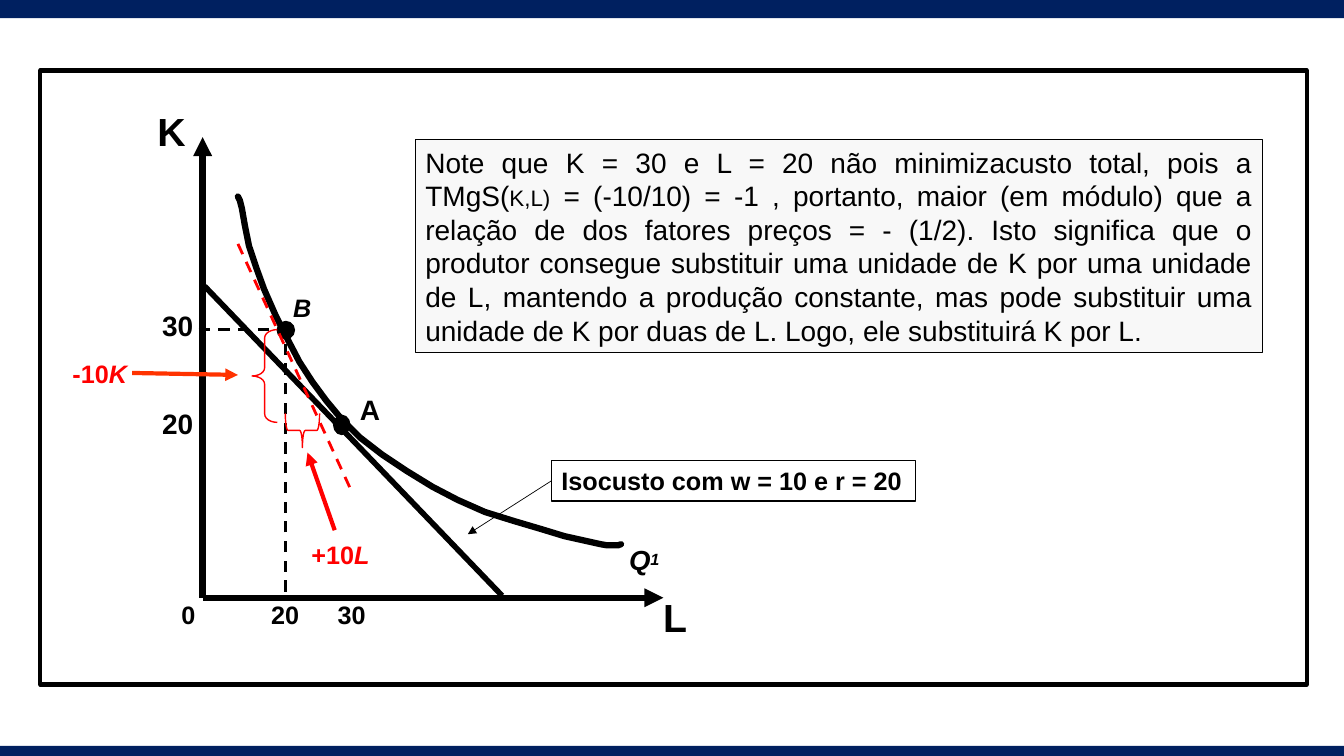
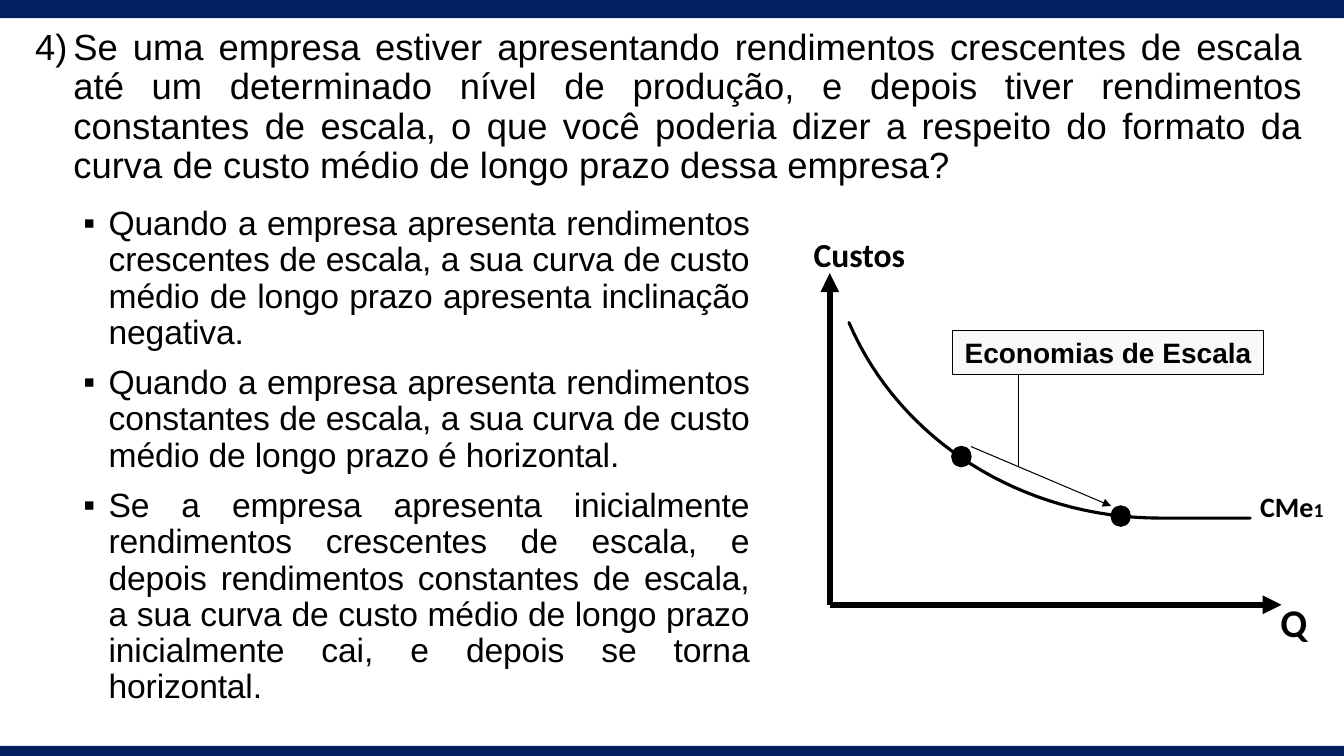
from lxml import etree
from pptx import Presentation
from pptx.dml.color import RGBColor
from pptx.enum.dml import MSO_LINE
from pptx.enum.shapes import MSO_CONNECTOR, MSO_SHAPE
from pptx.enum.text import MSO_ANCHOR, PP_ALIGN
from pptx.oxml.ns import qn
from pptx.util import Inches, Pt

NAVY, BLACK, RED, ORANGE, PALE = "002060", "000000", "FF0000", "FF3300", "F8F8F8"
SLIDE_WIDTH, SLIDE_HEIGHT = 13.33, 7.5

ISOQUANT = [
    (2.36, 1.95), (2.38, 1.99), (2.4, 2.07), (2.43, 2.24), (2.47, 2.44),
    (2.54, 2.65), (2.62, 2.87), (2.73, 3.12), (2.85, 3.36), (2.97, 3.59),
    (3.1, 3.79), (3.24, 3.98), (3.39, 4.16), (3.57, 4.34), (3.79, 4.51),
    (4.03, 4.67), (4.29, 4.83), (4.54, 4.96), (4.81, 5.08), (5.1, 5.17),
    (5.37, 5.25), (5.6, 5.32), (5.96, 5.4), (6.02, 5.41), (6.13, 5.41), (6.16, 5.4),
]

QUESTION = (
    "Se uma empresa estiver apresentando rendimentos crescentes de escala até um "
    "determinado nível de produção, e depois tiver rendimentos constantes de escala, "
    "o que você poderia dizer a respeito do formato da curva de custo médio de longo "
    "prazo dessa empresa?"
)
ANSWERS = [
    "Quando a empresa apresenta rendimentos crescentes de escala, a sua curva de custo "
    "médio de longo prazo apresenta inclinação negativa.",
    "Quando a empresa apresenta rendimentos constantes de escala, a sua curva de custo "
    "médio de longo prazo é horizontal.",
    "Se a empresa apresenta inicialmente rendimentos crescentes de escala, e depois "
    "rendimentos constantes de escala, a sua curva de custo médio de longo prazo "
    "inicialmente cai, e depois se torna horizontal.",
]
NOTE = [
    ("Note que K = 30 e L = 20 não minimizacusto total, pois a TMgS(", {}),
    ("K,L)", {"size": 16}),
    (" = (-10/10) = -1 , portanto, maior (em módulo) que a relação de dos fatores "
     "preços = - (1/2). Isto significa que o produtor consegue substituir uma unidade "
     "de K por uma unidade de L, mantendo a produção constante, mas pode substituir "
     "uma unidade de K por duas de L. Logo, ele substituirá K por L.", {}),
]


def rgb(color):
    return RGBColor.from_string(color)


def inches(values):
    return [Inches(value) for value in values]


def style_run(run, size, color=BLACK, font="Arial", bold=False, italic=False, baseline=None):
    run.font.size = Pt(size)
    run.font.name = font
    run.font.bold = bold
    run.font.italic = italic
    run.font.color.rgb = rgb(color)
    if baseline:
        run.font._element.set("baseline", str(baseline * 1000))


def write(paragraph, runs, **style):
    """Add runs, given as a string or as (text, overriding style) pairs."""
    if isinstance(runs, str):
        runs = [(runs, {})]
    for text, own_style in runs:
        run = paragraph.add_run()
        run.text = text
        style_run(run, **{**style, **own_style})


def add_label(slide, runs, box, size=18, bold=True, align=PP_ALIGN.LEFT, **style):
    frame = slide.shapes.add_textbox(*inches(box)).text_frame
    frame.word_wrap = False
    frame.paragraphs[0].alignment = align
    write(frame.paragraphs[0], runs, size=size, bold=bold, **style)


def add_shape(slide, kind, box, fill=None, line=None, width=1):
    shape = slide.shapes.add_shape(kind, *inches(box))
    finish_shape(shape, fill, line, width)
    return shape


def finish_shape(shape, fill, line, width):
    shape.shadow.inherit = False
    if fill:
        shape.fill.solid()
        shape.fill.fore_color.rgb = rgb(fill)
    else:
        shape.fill.background()
    if line:
        shape.line.color.rgb = rgb(line)
        shape.line.width = Pt(width)
    else:
        shape.line.fill.background()


def add_boxed_text(slide, runs, box, fill=None, width=0.75, wrap=True,
                   align=PP_ALIGN.LEFT, **style):
    shape = add_shape(slide, MSO_SHAPE.RECTANGLE, box, fill, BLACK, width)
    frame = shape.text_frame
    frame.word_wrap = wrap
    frame.vertical_anchor = MSO_ANCHOR.MIDDLE
    frame.paragraphs[0].alignment = align
    write(frame.paragraphs[0], runs, **style)
    return shape


def add_dot(slide, box):
    add_shape(slide, MSO_SHAPE.OVAL, box, BLACK, BLACK)


def add_line(slide, start, end, width, color=BLACK, dashed=False, arrow=False):
    connector = slide.shapes.add_connector(MSO_CONNECTOR.STRAIGHT, *inches(start + end))
    connector.line.color.rgb = rgb(color)
    connector.line.width = Pt(width)
    if dashed:
        connector.line.dash_style = MSO_LINE.DASH
    properties = connector._element.spPr
    if arrow:
        etree.SubElement(properties.find(qn("a:ln")), qn("a:tailEnd"), type="triangle")
    etree.SubElement(properties, qn("a:effectLst"))
    return connector


def add_curve(slide, points, width):
    first, *rest = [tuple(inches(point)) for point in points]
    builder = slide.shapes.build_freeform(*first)
    builder.add_line_segments(rest, close=False)
    curve = builder.convert_to_shape()
    finish_shape(curve, None, BLACK, width)
    curve._element.spPr.find(qn("a:ln")).set("cap", "rnd")


def bezier(p0, p1, p2, p3, steps=32):
    """Points along a cubic Bézier curve."""
    def at(t):
        weights = ((1 - t) ** 3, 3 * t * (1 - t) ** 2, 3 * t * t * (1 - t), t ** 3)
        return tuple(sum(w * p[axis] for w, p in zip(weights, (p0, p1, p2, p3)))
                     for axis in (0, 1))
    return [at(step / steps) for step in range(steps + 1)]


def add_brace(slide, box, bend, rotation=0):
    brace = add_shape(slide, MSO_SHAPE.LEFT_BRACE, box, line=RED)
    brace.adjustments[0] = bend
    brace.rotation = rotation


def add_list(slide, items, box, size, indent, bullet, space_before=0, spacing=0):
    """Justified list; bullet is a (tag, attributes) pair."""
    frame = slide.shapes.add_textbox(*inches(box)).text_frame
    frame.word_wrap = True
    for index, item in enumerate(items):
        paragraph = frame.add_paragraph() if index else frame.paragraphs[0]
        paragraph.alignment = PP_ALIGN.JUSTIFY
        paragraph.line_spacing = 0.9
        paragraph.space_before = Pt(space_before)
        write(paragraph, item, size=size)
        for run in paragraph.runs:
            run.font._element.set("spc", str(spacing))
        properties = paragraph._p.get_or_add_pPr()
        properties.set("marL", str(Inches(indent)))
        properties.set("indent", str(-Inches(indent)))
        etree.SubElement(properties, qn("a:buFont"), typeface="Arial")
        tag, attributes = bullet
        etree.SubElement(properties, qn(tag), **attributes)


def add_banded_slide(deck):
    slide = deck.slides.add_slide(deck.slide_layouts[6])
    for top, height in ((0, 0.18), (7.4, 0.1)):
        add_shape(slide, MSO_SHAPE.RECTANGLE, (0, top, SLIDE_WIDTH, height), NAVY)
    return slide


def add_axes(slide, origin, top, right):
    x, y = origin
    add_line(slide, origin, (x, top), 4.5, arrow=True)
    add_line(slide, origin, (right, y), 4.5, arrow=True)


def build_isoquant_slide(deck):
    slide = add_banded_slide(deck)
    add_axes(slide, (2.01, 5.93), top=1.36, right=6.58)
    add_label(slide, "L", (6.48, 5.84, 0.44, 0.57), 28)
    add_label(slide, "K", (1.46, 1.02, 0.48, 0.57), 28, align=PP_ALIGN.RIGHT)
    for amount, left, width in (("0", 1.7, 0.34), ("20", 2.59, 0.48), ("30", 3.25, 0.48)):
        add_label(slide, amount, (left, 5.9, width, 0.4))
    for amount, top in (("30", 3.01), ("20", 3.98)):
        add_label(slide, amount, (1.51, top, 0.51, 0.43), 20)

    add_curve(slide, ISOQUANT, 4.5)
    add_label(slide, [("Q", {}), ("1", {"size": 20})], (6.14, 5.02, 0.55, 0.48), 34,
              italic=True, baseline=-25)
    add_line(slide, (1.97, 3.27), (2.77, 3.27), 2, dashed=True)
    add_line(slide, (2.83, 5.87), (2.83, 3.22), 2, dashed=True)
    add_line(slide, (2.03, 2.84), (4.98, 5.91), 4)
    add_dot(slide, (2.75, 3.19, 0.17, 0.17))
    add_label(slide, "B", (2.81, 2.85, 0.38, 0.4), italic=True)
    add_dot(slide, (3.31, 4.12, 0.16, 0.19))
    add_label(slide, "A", (3.47, 3.84, 0.4, 0.43), 20)

    add_brace(slide, (2.5, 3.27, 0.25, 0.92), 0.33)
    add_brace(slide, (2.83, 4.1, 0.34, 0.34), 0.08, rotation=270)
    for change, factor, box in (("-10", "K", (0.62, 3.51, 0.75, 0.4)),
                                ("+10", "L", (2.99, 5.3, 0.78, 0.4))):
        add_label(slide, [(change, {}), (factor, {"italic": True})], box, color=RED)
    add_line(slide, (3.32, 5.26), (3.05, 4.49), 3, RED, arrow=True)
    add_line(slide, (2.36, 2.42), (3.49, 4.88), 2, RED, dashed=True)
    add_line(slide, (1.31, 3.7), (2.36, 3.72), 3, ORANGE, arrow=True)

    isocost = add_boxed_text(slide, "Isocusto com w = 10 e r = 20", (5.47, 4.57, 3.61, 0.4),
                             width=1, wrap=False, size=18, bold=True)
    pointer = add_line(slide, (5.47, 4.77), (4.64, 5.3), 0.5, arrow=True)
    pointer.begin_connect(isocost, 1)
    add_boxed_text(slide, NOTE, (4.12, 1.38, 8.4, 2.12), PALE,
                   align=PP_ALIGN.JUSTIFY, size=20)
    add_shape(slide, MSO_SHAPE.RECTANGLE, (0.4, 0.7, 12.56, 6.09), line=BLACK, width=3)


def build_average_cost_slide(deck):
    slide = add_banded_slide(deck)
    add_list(slide, [QUESTION], (0.25, 0.24, 12.78, 1.45), 26, 0.38,
             ("a:buAutoNum", {"type": "arabicParenR", "startAt": "4"}))
    add_list(slide, ANSWERS, (0.73, 2, 6.8, 4.76), 24, 0.25,
             ("a:buChar", {"char": "▪"}), space_before=10, spacing=-10)

    add_axes(slide, (8.23, 6), top=2.71, right=12.71)
    add_label(slide, "Custos", (7.97, 2.27, 1.11, 0.5), 24, font="Calibri")
    add_label(slide, "Q", (12.6, 5.89, 0.47, 0.57), 28, font="Calibri")
    falling = bezier((8.42, 3.2), (8.92, 4.37), (10.14, 5.14), (11.5, 5.14))
    add_curve(slide, falling + [(12.4, 5.14)], 2.25)
    add_label(slide, [("CMe", {}), ("1", {"size": 14})], (12.4, 4.81, 0.84, 0.43), 20,
              font="Calibri")
    for left, top in ((11.02, 5.02), (9.44, 4.43)):
        add_dot(slide, (left, top, 0.19, 0.2))
    add_line(slide, (9.63, 4.43), (11.02, 5.02), 0.75, arrow=True)
    add_line(slide, (10.1, 4.63), (10.1, 3.7), 0.75)
    add_boxed_text(slide, "Economias de Escala", (9.45, 3.28, 3.08, 0.44), PALE,
                   align=PP_ALIGN.CENTER, size=20, bold=True)


def main():
    deck = Presentation()
    deck.slide_width, deck.slide_height = inches((SLIDE_WIDTH, SLIDE_HEIGHT))
    build_isoquant_slide(deck)
    build_average_cost_slide(deck)
    deck.save("out.pptx")


if __name__ == "__main__":
    main()
